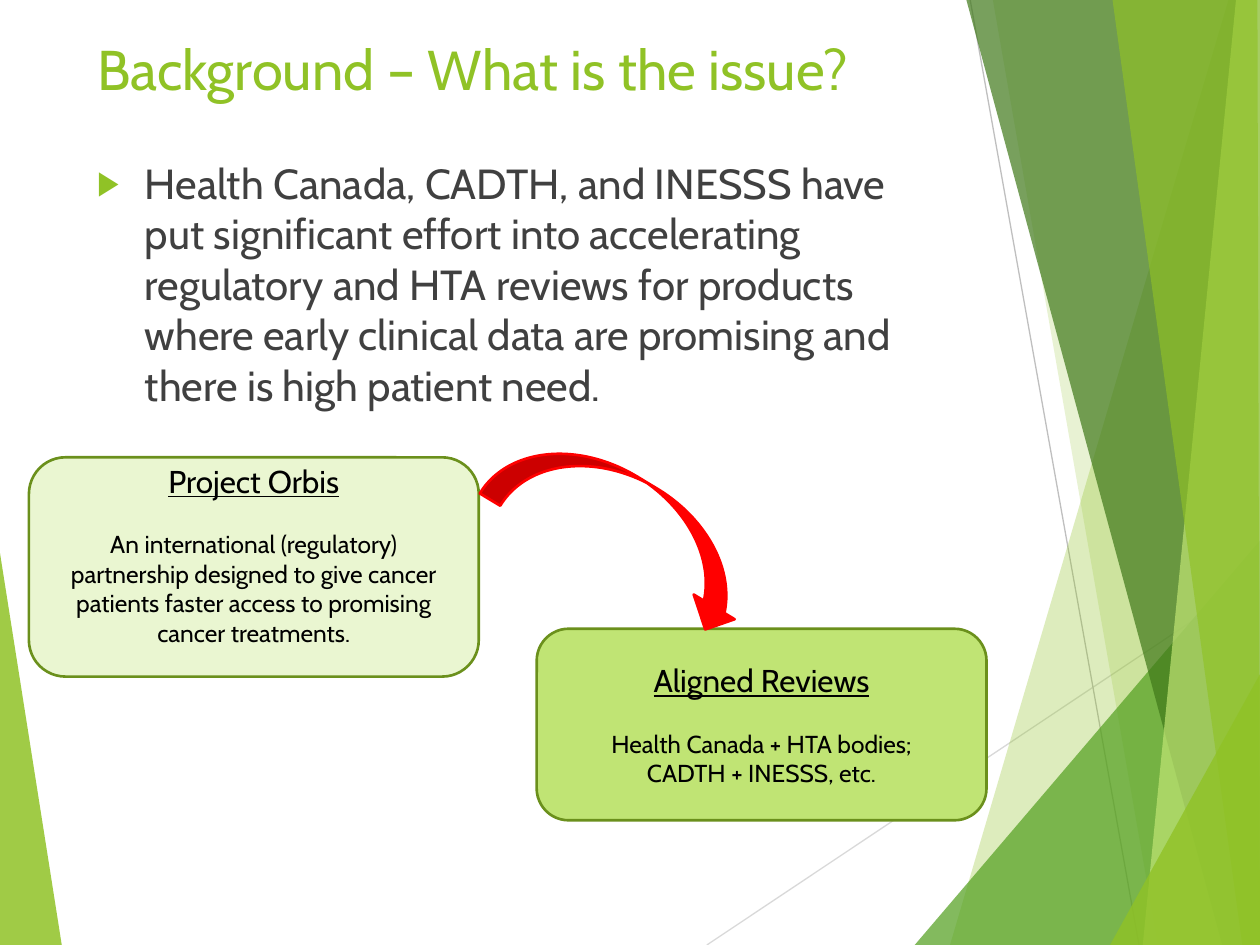
from lxml.etree import SubElement
from pptx import Presentation
from pptx.dml.color import RGBColor
from pptx.enum.shapes import MSO_CONNECTOR, MSO_SHAPE
from pptx.enum.text import MSO_ANCHOR, PP_ALIGN
from pptx.oxml.ns import qn
from pptx.util import Inches, Pt

FONT = "Cabin"
COLORS = {
    "lime": "90C226", "green": "54A021", "forest": "3F7819", "light_lime": "C0E474",
    "pale_lime": "EAF6D1", "outline": "6B901C", "red": "FF0000", "text": "404040",
    "black": "000000", "light_gray": "D9D9D9", "gray": "BFBFBF",
}

# Background decoration: color, opacity in percent, corner points in inches
LEFT_FACET = ("lime", 85, [(0, 4.39), (0.49, 7.5), (0, 7.5)])
RIGHT_FACETS = [
    ("lime", 30, [(9.75, 0), (7.54, 7.5), (10, 7.5), (10, 0)]),
    ("lime", 20, [(7.88, 0), (9.19, 7.5), (10, 7.5), (10, 0)]),
    ("green", 72, [(7.26, 7.5), (10, 4.29), (10, 7.5)]),
    ("forest", 70, [(7.67, 0), (9.7, 7.5), (10, 7.5), (10, 0)]),
    ("light_lime", 70, [(9.81, 0), (9.07, 7.5), (10, 7.5), (10, 0)]),
    ("lime", 65, [(8.83, 0), (9.86, 7.5), (10, 7.5), (9.98, 0)]),
    ("lime", 80, [(8.81, 7.5), (10, 5.35), (10, 7.5)]),
]
THIN_LINES = [("light_gray", (5.61, 7.5), (10, 4.57)), ("gray", (7.7, 0), (9.04, 7.5))]


def color(name):
    return RGBColor.from_string(COLORS[name])


def place(shape, left, top, width, height):
    shape.left, shape.top = Inches(left), Inches(top)
    shape.width, shape.height = Inches(width), Inches(height)


def add_run(paragraph, text, size, color_name, underline=None):
    run = paragraph.add_run()
    run.text = text
    run.font.name = FONT
    run.font.size = Pt(size)
    run.font.color.rgb = color(color_name)
    run.font.underline = underline


def add_facet(slide, color_name, opacity, points):
    corners = [(Inches(x), Inches(y)) for x, y in points]
    builder = slide.shapes.build_freeform(*corners[0])
    builder.add_line_segments(corners[1:], close=True)
    shape = builder.convert_to_shape()
    shape.shadow.inherit = False
    shape.fill.solid()
    shape.fill.fore_color.rgb = color(color_name)
    shape.line.fill.background()
    fill_color = shape.fill._xPr.find(qn("a:solidFill"))[0]
    SubElement(fill_color, qn("a:alpha")).set("val", str(opacity * 1000))


def add_thin_line(slide, color_name, start, end):
    ends = [Inches(value) for value in (*start, *end)]
    connector = slide.shapes.add_connector(MSO_CONNECTOR.STRAIGHT, *ends)
    connector.line.color.rgb = color(color_name)
    connector.line.width = Pt(0.75)
    SubElement(connector._element.spPr, qn("a:effectLst"))


def add_filled_shape(slide, kind, box, fill_name, line_name):
    shape = slide.shapes.add_shape(kind, *[Inches(value) for value in box])
    shape.shadow.inherit = False
    shape.fill.solid()
    shape.fill.fore_color.rgb = color(fill_name)
    shape.line.color.rgb = color(line_name)
    shape.line.width = Pt(1.5)
    return shape


def add_card(slide, box, fill_name, heading, lines, bottom_inset=0.05):
    card = add_filled_shape(slide, MSO_SHAPE.ROUNDED_RECTANGLE, box, fill_name, "outline")
    frame = card.text_frame
    frame.word_wrap = True
    frame.vertical_anchor = MSO_ANCHOR.MIDDLE
    frame.margin_bottom = Inches(bottom_inset)
    paragraph = frame.paragraphs[0]
    paragraph.alignment = PP_ALIGN.CENTER
    paragraph.space_after = Pt(17)
    add_run(paragraph, heading, 18, "black", underline=True)
    for line in lines:
        paragraph = frame.add_paragraph()
        paragraph.alignment = PP_ALIGN.CENTER
        add_run(paragraph, line, 14, "black")


def fill_placeholder(placeholder, box, text, size, color_name):
    place(placeholder, *box)
    frame = placeholder.text_frame
    frame.word_wrap = True
    frame.vertical_anchor = MSO_ANCHOR.TOP
    paragraph = frame.paragraphs[0]
    paragraph.alignment = PP_ALIGN.LEFT
    add_run(paragraph, text, size, color_name)
    return paragraph


def add_bullet(paragraph, character, color_name, percent, indent):
    properties = paragraph._p.get_or_add_pPr()
    properties.set("marL", str(Inches(indent)))
    properties.set("indent", str(-Inches(indent)))
    bullet_color = SubElement(properties, qn("a:buClr"))
    SubElement(bullet_color, qn("a:srgbClr")).set("val", COLORS[color_name])
    SubElement(properties, qn("a:buSzPct")).set("val", str(percent * 1000))
    SubElement(properties, qn("a:buChar")).set("char", character)


def main():
    presentation = Presentation()
    presentation.slide_width, presentation.slide_height = Inches(10), Inches(7.5)
    slide = presentation.slides.add_slide(presentation.slide_layouts[1])

    # Background facets and lines
    add_facet(slide, *LEFT_FACET)
    for line in THIN_LINES:
        add_thin_line(slide, *line)
    for facet in RIGHT_FACETS:
        add_facet(slide, *facet)

    # Title and main point
    fill_placeholder(slide.shapes.title, (0.67, 0.22, 6.94, 1.17),
                     "Background – What is the issue?", 32, "lime")
    point = fill_placeholder(
        slide.placeholders[1], (0.67, 1.2, 6.94, 2.55),
        "Health Canada, CADTH, and INESSS have put significant effort into accelerating "
        "regulatory and HTA reviews for products where early clinical data are promising "
        "and there is high patient need.", 24, "text")
    point.space_before = Pt(10)
    add_bullet(point, "▶", "lime", 80, 0.38)

    # Two cards joined by a curved arrow
    add_card(slide, (0.23, 3.63, 3.57, 1.74), "pale_lime", "Project Orbis",
             ["An international (regulatory) partnership designed to give cancer "
              "patients faster access to promising cancer treatments."], bottom_inset=0.25)
    add_card(slide, (4.26, 4.99, 3.57, 1.52), "light_lime", "Aligned Reviews",
             ["Health Canada + HTA bodies;", "CADTH + INESSS, etc."])
    arrow = add_filled_shape(slide, MSO_SHAPE.CURVED_DOWN_ARROW,
                             (3.84, 3.8, 2.28, 0.76), "red", "red")
    arrow.rotation = 31.1

    presentation.save("out.pptx")


if __name__ == "__main__":
    main()
